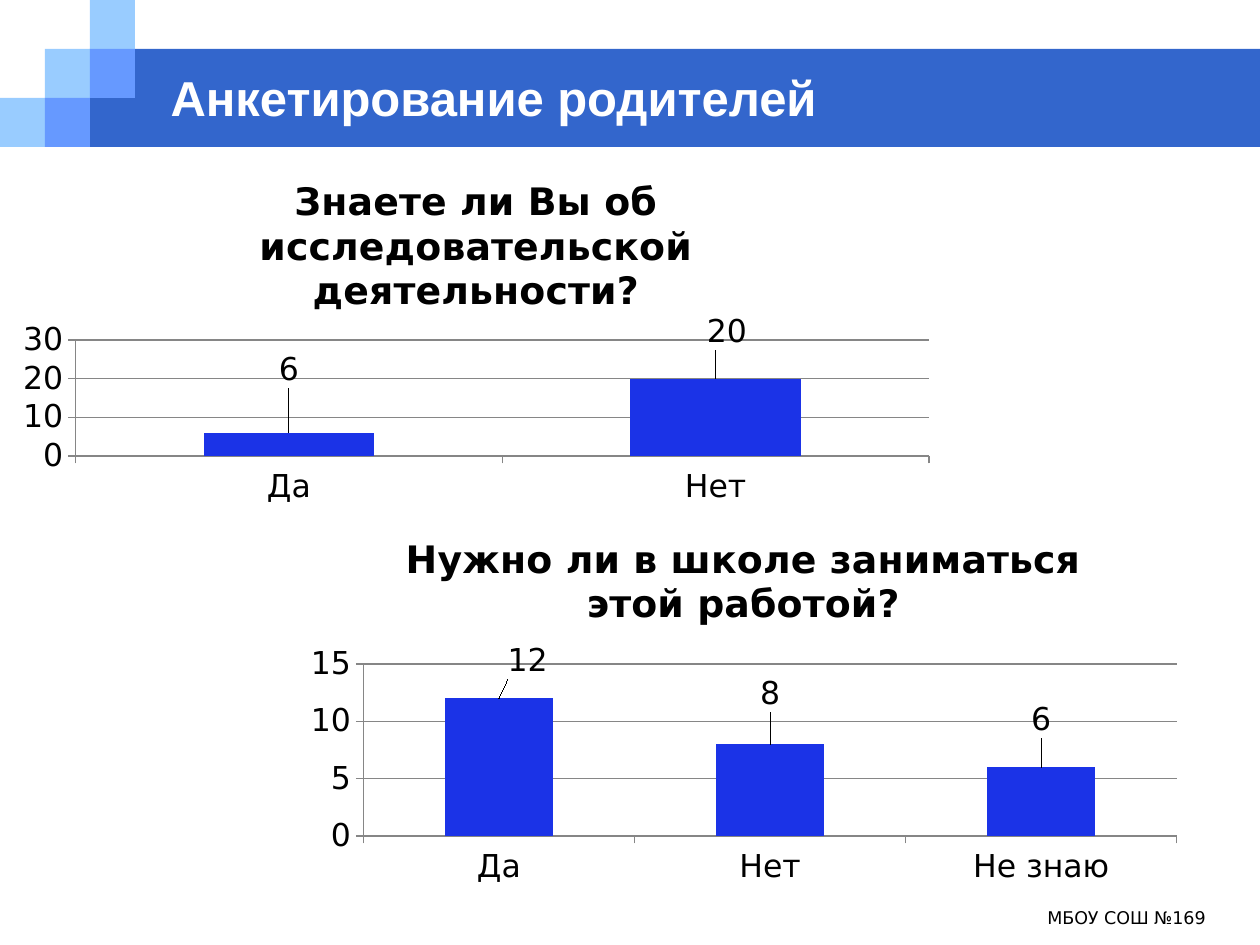
import pptx
import pptx.util
import pptx.chart.data
import pptx.dml.color
import pptx.enum.chart
import pptx.enum.shapes
import pptx.enum.text
import pptx.oxml
import pptx.oxml.ns

PX = 914400 // 126
COLORS = {"band": "3366CC", "light": "99CCFF", "mid": "6699FF", "bar": "1B33E7",
          "line": "868686", "text": "000000", "title": "FFFFFF"}
SANS = "DejaVu Sans"
qn = pptx.oxml.ns.qn


def px(*values):
    return [v * PX for v in values]


def rgb(name):
    return pptx.dml.color.RGBColor.from_string(COLORS[name])


def style(font, name, size, color, bold=False):
    font.name, font.size, font.bold = name, pptx.util.Pt(size), bold
    font.color.rgb = rgb(color)


def add_rect(s, box, color):
    sp = s.shapes.add_shape(pptx.enum.shapes.MSO_SHAPE.RECTANGLE, *px(*box))
    sp.shadow.inherit = False
    sp.fill.solid()
    sp.fill.fore_color.rgb = rgb(color)
    sp.line.fill.background()


def add_header(s, box, text):
    x, y, w, h = box
    cell_w, cell_h = 45, h // 3
    # Band, then the stair of squares as (column, row, color)
    add_rect(s, (x + 2 * cell_w, y + cell_h, w - 2 * cell_w, 2 * cell_h), "band")
    for col, row, color in ((0, 2, "light"), (1, 1, "light"), (2, 0, "light"),
                            (2, 1, "mid"), (1, 2, "mid")):
        add_rect(s, (x + col * cell_w, y + row * cell_h, cell_w, cell_h), color)
    # Title, raised above the band
    title = s.shapes.title
    title.left, title.top, title.width, title.height = px(x + 158, y + 63, 1018, 67)
    s.shapes._spTree.append(title._element)
    tf = title.text_frame
    tf.text = text
    tf.vertical_anchor = pptx.enum.text.MSO_ANCHOR.MIDDLE
    p = tf.paragraphs[0]
    p.alignment = pptx.enum.text.PP_ALIGN.LEFT
    style(p.runs[0].font, "Arial", 28, "title", True)


def manual_layout(x, y, w=None, h=None):
    """Return a c:layout: an inner plot box, or a label offset without w and h."""
    parts = {"x": x, "y": y}
    head = ""
    if w:
        parts.update(w=w, h=h)
        head = ('<c:layoutTarget val="inner"/><c:xMode val="edge"/>'
                '<c:yMode val="edge"/>')
    body = "".join(f'<c:{k} val="{v:.3f}"/>' for k, v in parts.items())
    return pptx.oxml.parse_xml(
        f'<c:layout {pptx.oxml.ns.nsdecls("c")}><c:manualLayout>{head}{body}'
        '</c:manualLayout></c:layout>')


def add_survey_chart(s, box, plot_box, question, answers, step, top, offsets):
    """Draw one question; plot_box and label offsets are px within the box."""
    w, h = box[2:]
    data = pptx.chart.data.CategoryChartData()
    data.categories = list(answers)
    data.add_series(question, list(answers.values()))
    chart = s.shapes.add_chart(pptx.enum.chart.XL_CHART_TYPE.COLUMN_CLUSTERED,
                               *px(*box), data).chart
    style(chart.font, SANS, 18, "text")
    chart.has_legend = False
    chart.has_title = True
    tf = chart.chart_title.text_frame
    tf.text = question
    style(tf.paragraphs[0].runs[0].font, SANS, 21.6, "text", True)

    # Axes
    value_axis = chart.value_axis
    value_axis.minimum_scale, value_axis.maximum_scale = 0, top
    value_axis.major_unit = step
    for axis in (value_axis, chart.category_axis):
        axis.major_tick_mark = pptx.enum.chart.XL_TICK_MARK.OUTSIDE
        axis.format.line.color.rgb = rgb("line")
    value_axis.major_gridlines.format.line.color.rgb = rgb("line")

    # Bars and value labels
    plot = chart.plots[0]
    plot.gap_width = 150
    plot.vary_by_categories = False
    series = plot.series[0]
    series.format.fill.solid()
    series.format.fill.fore_color.rgb = rgb("bar")
    series.data_labels.show_value = True
    for i in range(len(answers)):
        label = series.points[i].data_label
        label.position = pptx.enum.chart.XL_LABEL_POSITION.OUTSIDE_END
    for node, (dx, dy) in zip(chart.element.iter(qn("c:dLbl")), offsets):
        node.find(qn("c:idx")).addnext(manual_layout(dx / w, dy / h))

    # Plot area
    area = next(chart.element.iter(qn("c:plotArea")))
    for old in area.findall(qn("c:layout")):
        area.remove(old)
    left, upper, width, height = plot_box
    area.insert(0, manual_layout(left / w, upper / h, width / w, height / h))


def add_footer(s, box, text):
    tf = s.shapes.add_textbox(*px(*box)).text_frame
    tf.word_wrap = True
    tf.text = text
    p = tf.paragraphs[0]
    p.alignment = pptx.enum.text.PP_ALIGN.RIGHT
    style(p.runs[0].font, SANS, 10, "text")


def main():
    prs = pptx.Presentation()
    prs.slide_width, prs.slide_height = px(1260, 945)
    s = prs.slides.add_slide(prs.slide_layouts[5])
    add_header(s, (0, 0, 1260, 149), "Анкетирование родителей")
    add_footer(s, (819, 901, 399, 44), "МБОУ СОШ №169")
    add_survey_chart(s, (5, 155, 942, 356), (71, 185, 853, 116),
                     "Знаете ли Вы об исследовательской деятельности?",
                     {"Да": 6, "Нет": 20}, 10, 30, [(0, -39), (11, -23)])
    add_survey_chart(s, (292, 512, 903, 380), (71, 152, 814, 172),
                     "Нужно ли в школе заниматься этой работой?",
                     {"Да": 12, "Нет": 8, "Не знаю": 6}, 5, 15,
                     [(29, -14), (0, -27), (0, -24)])
    prs.save("out.pptx")


if __name__ == "__main__":
    main()
